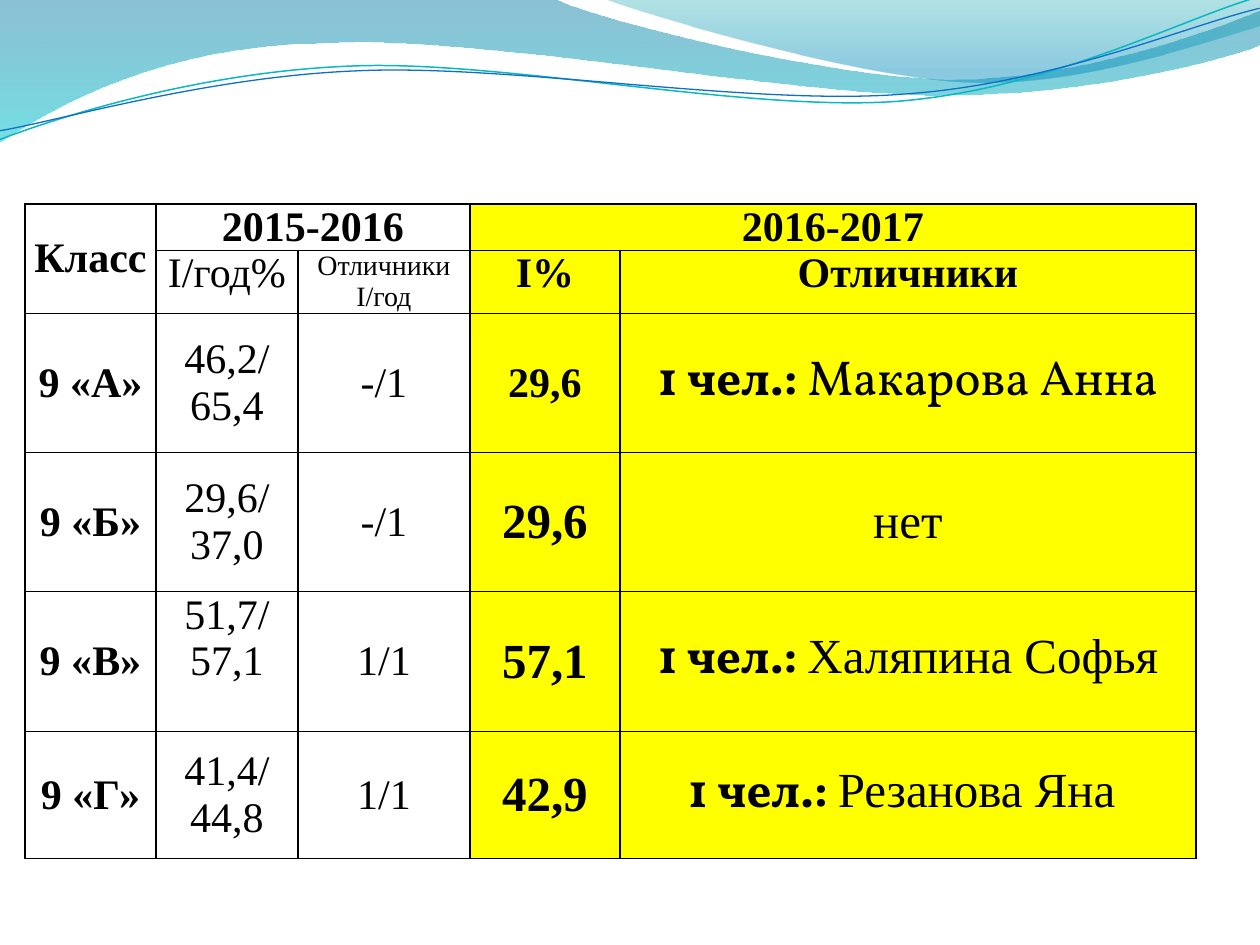
"""Build a slide with a wave header and a table of ninth-grade results by class."""
from dataclasses import dataclass

from lxml.etree import SubElement
from pptx import Presentation
from pptx.dml.color import RGBColor
from pptx.enum.text import MSO_ANCHOR, PP_ALIGN
from pptx.oxml.ns import qn
from pptx.util import Pt

PX = 914400 / 126


@dataclass(frozen=True)
class Theme:
    black: RGBColor = RGBColor(0, 0, 0)
    white: RGBColor = RGBColor(255, 255, 255)
    yellow: RGBColor = RGBColor(255, 255, 0)
    teal: RGBColor = RGBColor.from_string("0AB8BF")
    blue: RGBColor = RGBColor.from_string("0F6FC6")
    font: str = "Times New Roman"
    accent_font: str = "Vollkorn"
    small: Pt = Pt(16)
    normal: Pt = Pt(24)
    large: Pt = Pt(28)


theme = Theme()


def add_wave(shapes, segments, closed):
    """Draw straight (2 numbers) and cubic (6 numbers) segments as one outline."""
    points = [(round(segment[i] * PX), round(segment[i + 1] * PX))
              for segment in segments for i in range(0, len(segment), 2)]
    builder = shapes.build_freeform(*points[0])
    builder.add_line_segments(points[1:], close=closed)
    shape = builder.convert_to_shape()
    shape.shadow.inherit = False
    outline = next(shape._element.iter(qn("a:path")))
    vertices = iter(outline.findall(qn("a:lnTo")))
    for segment in segments[1:]:
        vertex = next(vertices)
        if len(segment) == 6:
            curve = SubElement(outline, qn("a:cubicBezTo"))
            outline.replace(vertex, curve)
            curve.append(vertex[0])
            for control in (next(vertices), next(vertices)):
                curve.append(control[0])
                outline.remove(control)
    return shape


def fill_cell(cell, text, size, bold, color, anchor=MSO_ANCHOR.MIDDLE):
    """Write centred lines into a filled cell."""
    cell.margin_left = cell.margin_right = round(9 * PX)
    cell.margin_top = cell.margin_bottom = 0
    cell.vertical_anchor = anchor
    cell.text = text
    for paragraph in cell.text_frame.paragraphs:
        paragraph.alignment = PP_ALIGN.CENTER
        paragraph.font.name = theme.font
        paragraph.font.size = size
        paragraph.font.bold = bold
        paragraph.font.color.rgb = theme.black
    cell.fill.solid()
    cell.fill.fore_color.rgb = color


presentation = Presentation()
presentation.slide_width = round(1260 * PX)
presentation.slide_height = round(945 * PX)
slide = presentation.slides.add_slide(presentation.slide_layouts[6])

filled_waves = [
    ([(0, 0), (554, -1), (600, 21, 837, 79, 955, 79), (1075, 79, 1207, 33, 1260, 11),
      (1261, 45), (1239, 55, 1096, 96, 940, 95), (784, 95, 481, 35, 324, 43),
      (163, 45, 58, 105, -1, 142)],
     [("0074A1", 0, 45), ("00C6CF", 1, 55)]),
    ([(604, -1), (641, 14, 859, 78, 969, 82), (1079, 87, 1211, 40, 1260, 26), (1260, 0)],
     [("00A1A9", 0, 30), ("008BBF", 0.8, 45)]),
]
for segments, stops in filled_waves:
    wave = add_wave(slide.shapes, segments, True)
    wave.line.fill.background()
    wave.fill.gradient()
    wave.fill.gradient_angle = 270
    for stop, (color, position, opacity) in zip(wave.fill.gradient_stops, stops):
        stop.color.rgb = RGBColor.from_string(color)
        stop.position = position
    colors = list(wave._element.spPr.iter(qn("a:srgbClr")))
    for element, (color, position, opacity) in zip(colors, stops):
        SubElement(element, qn("a:alpha"), val=str(opacity * 1000))

line_waves = [
    ([(-3, 110), (58, 90, 199, 52, 350, 53), (499, 53, 745, 118, 896, 114),
      (1049, 109, 1184, 45, 1260, 27)], theme.teal, 0.85),
    ([(-2, 101), (57, 94, 207, 57, 357, 58), (509, 58, 750, 112, 902, 107),
      (1052, 104, 1188, 52, 1262, 38)], theme.blue, 0.75),
]
line_group = slide.shapes.add_group_shape()
for segments, color, width in line_waves:
    wave = add_wave(line_group.shapes, segments, False)
    wave.rotation = 357.3
    wave.fill.background()
    wave.line.color.rgb = color
    wave.line.width = Pt(width)

column_widths = [131, 142, 172, 150, 576]
row_heights = [46, 63, 139, 139, 140, 127]
table = slide.shapes.add_table(
    len(row_heights), len(column_widths), round(25 * PX), round(204 * PX),
    round(sum(column_widths) * PX), round(sum(row_heights) * PX)).table
for column, width in zip(table.columns, column_widths):
    column.width = round(width * PX)
for row, height in zip(table.rows, row_heights):
    row.height = round(height * PX)
for cell in table.iter_cells():
    properties = cell._tc.get_or_add_tcPr()
    for side in ("a:lnL", "a:lnR", "a:lnT", "a:lnB"):
        border = SubElement(properties, qn(side), w=str(Pt(1)))
        solid = SubElement(border, qn("a:solidFill"))
        SubElement(solid, qn("a:srgbClr"), val=str(theme.black))

for first, last in (((0, 0), (1, 0)), ((0, 1), (0, 2)), ((0, 3), (0, 4))):
    table.cell(*first).merge(table.cell(*last))

fill_cell(table.cell(0, 0), "Класс", theme.normal, True, theme.white)
headings = [
    (0, 1, "2015-2016", theme.normal, True, theme.white),
    (0, 3, "2016-2017", theme.normal, True, theme.yellow),
    (1, 1, "I/год%", theme.normal, False, theme.white),
    (1, 2, "Отличники\nI/год", theme.small, False, theme.white),
    (1, 3, "I%", theme.normal, True, theme.yellow),
    (1, 4, "Отличники", theme.normal, True, theme.yellow),
]
for row, column, text, size, bold, color in headings:
    fill_cell(table.cell(row, column), text, size, bold, color, MSO_ANCHOR.TOP)

classes = [
    ("9 «А»", "46,2/\n65,4", "-/1", "29,6", theme.normal, "Макарова Анна", theme.accent_font),
    ("9 «Б»", "29,6/\n37,0", "-/1", "29,6", theme.large, None, theme.font),
    ("9 «В»", "51,7/\n57,1", "1/1", "57,1", theme.large, "Халяпина Софья", theme.font),
    ("9 «Г»", "41,4/\n44,8", "1/1", "42,9", theme.large, "Резанова Яна ", theme.font),
]
for row, (name, quality, top_pupils, score, score_size, pupil, pupil_font) in enumerate(classes, 2):
    fill_cell(table.cell(row, 0), name, theme.normal, True, theme.white)
    fill_cell(table.cell(row, 1), quality, theme.normal, False, theme.white)
    fill_cell(table.cell(row, 2), top_pupils, theme.normal, False, theme.white)
    fill_cell(table.cell(row, 3), score, score_size, True, theme.yellow)
    pupil_cell = table.cell(row, 4)
    fill_cell(pupil_cell, "" if pupil else "нет", theme.large, False, theme.yellow)
    if pupil:
        paragraph = pupil_cell.text_frame.paragraphs[0]
        for text, font, bold in (("1 чел.: ", theme.accent_font, True), (pupil, pupil_font, False)):
            run = paragraph.add_run()
            run.text = text
            run.font.name = font
            run.font.bold = bold
table.cell(4, 1).margin_bottom = round(46 * PX)

presentation.save("out.pptx")
